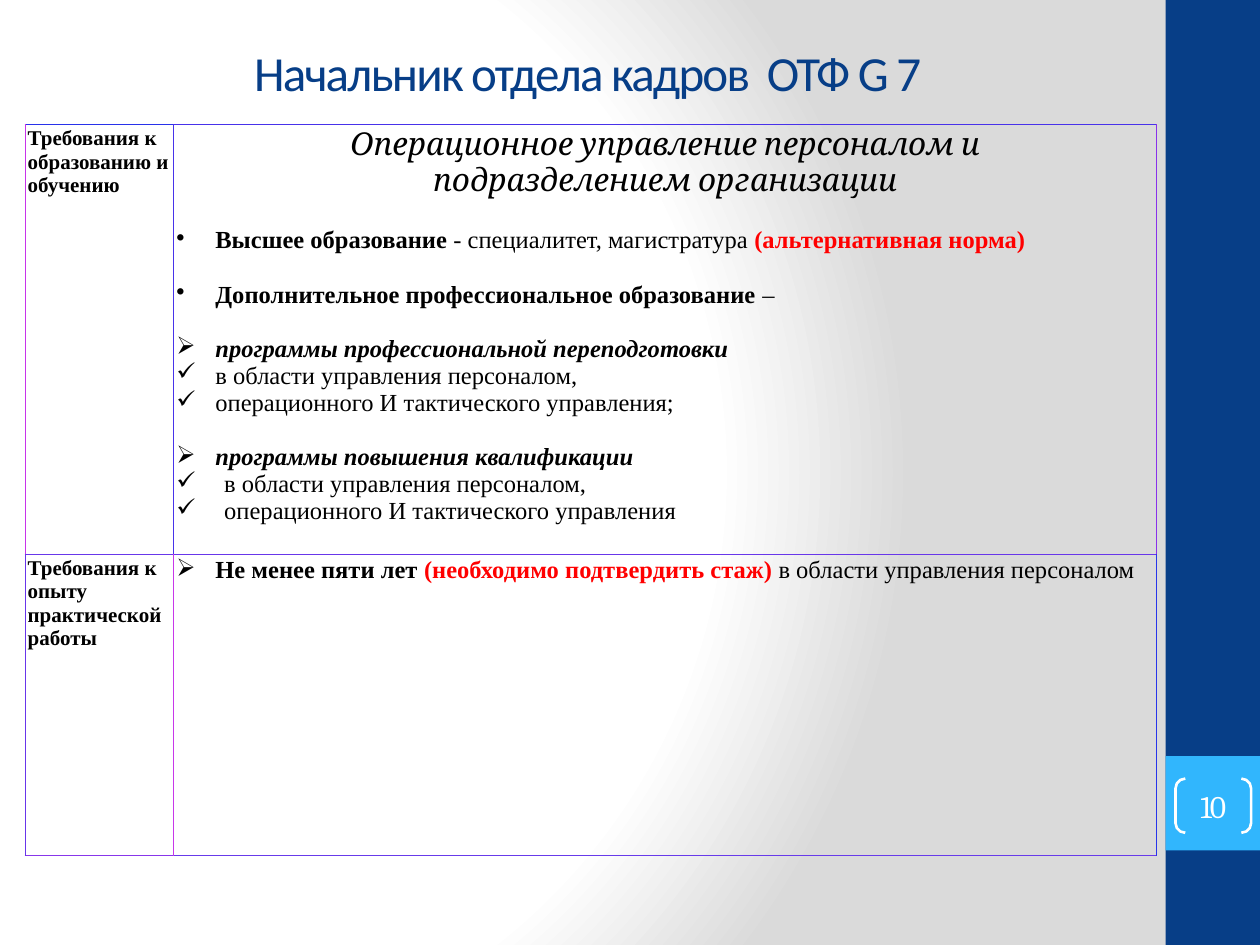
"""Build the slide with the requirements for a head of personnel."""
from lxml.etree import SubElement
from pptx import Presentation
from pptx.dml.color import RGBColor
from pptx.enum.shapes import MSO_SHAPE
from pptx.enum.text import MSO_ANCHOR, PP_ALIGN
from pptx.oxml import parse_xml
from pptx.oxml.ns import nsdecls, qn
from pptx.util import Inches, Pt

NAVY = RGBColor(0x07, 0x3E, 0x87)
SKY = RGBColor(0x31, 0xB6, 0xFD)
WHITE = RGBColor(0xFF, 0xFF, 0xFF)
BLACK = RGBColor(0x00, 0x00, 0x00)
RED = RGBColor(0xFF, 0x00, 0x00)

TITLE = "Начальник отдела кадров  ОТФ G 7"
PAGE_NUMBER = "10"
HEADING = ["Операционное управление персоналом и", "подразделением организации"]
ROW_LABELS = ["Требования к образованию и обучению", "Требования к опыту практической работы"]

GAP = 15.5
EDUCATION = [
    ("•", 0.31, GAP, [("Высшее образование ", "bold"), ("- специалитет, магистратура ", ""),
                      ("(альтернативная норма)", "bold red")]),
    ("•", 0.31, GAP, [("Дополнительное профессиональное образование ", "bold"), ("–", "")]),
    ("➢", 0.31, GAP, [("программы профессиональной переподготовки", "bold italic")]),
    ("✓", 0.31, 0, [("в области управления персоналом,", "")]),
    ("✓", 0.31, 0, [("операционного И тактического управления;", "")]),
    ("➢", 0.31, GAP, [("программы повышения квалификации", "bold italic")]),
    ("✓", 0.38, 0, [("в области управления персоналом,", "")]),
    ("✓", 0.38, 0, [("операционного И тактического управления", "")]),
]
EXPERIENCE = [
    ("➢", 0.31, 0, [("Не менее пяти лет ", "bold"), ("(необходимо подтвердить стаж) ", "bold red"),
                    ("в области управления персоналом", "")]),
]

COLUMN_WIDTHS = [1.18, 7.8]
ROW_HEIGHTS = [3.41, 2.39]
BORDER_SIDES = ["lnL", "lnR", "lnT", "lnB"]
BORDER_COLORS = [
    [("C833EA", "4833EA", "2831EA", "6837EA"), ("4833EA", "8831EA", "4831EA", "6836EA")],
    [("6835EA", "C837EA", "6837EA", "8836EA"), ("C837EA", "2835EA", "6836EA", "683AEA")],
]
GRADIENT_STOPS = [(0, "FFFFFF"), (75, "FFFFFF"), (100, "DADADA")]


def set_background(slide):
    stops = "".join(f'<a:gs pos="{position * 1000}"><a:srgbClr val="{color}"/></a:gs>'
                    for position, color in GRADIENT_STOPS)
    slide.element.cSld.insert(0, parse_xml(
        f'<p:bg {nsdecls("p", "a")}><p:bgPr><a:gradFill rotWithShape="1"><a:gsLst>{stops}</a:gsLst>'
        '<a:path path="circle"><a:fillToRect l="20000" t="50000" r="100000" b="50000"/></a:path>'
        '</a:gradFill><a:effectLst/></p:bgPr></p:bg>'))


def format_run(run, font_name, size, color=BLACK, bold=False, italic=False):
    font = run.font
    font.name, font.size, font.bold, font.italic = font_name, Pt(size), bold, italic
    font.color.rgb = color


def add_block(slide, top, height, color):
    shape = slide.shapes.add_shape(MSO_SHAPE.RECTANGLE, Inches(9.25), Inches(top), Inches(0.75), Inches(height))
    shape.shadow.inherit = False
    shape.fill.solid()
    shape.fill.fore_color.rgb = color
    shape.line.fill.background()


def write_centered(shape, text, font_name, size, color):
    frame = shape.text_frame
    frame.word_wrap = True
    frame.vertical_anchor = MSO_ANCHOR.MIDDLE
    frame.text = text
    paragraph = frame.paragraphs[0]
    paragraph.alignment = PP_ALIGN.CENTER
    run = paragraph.runs[0]
    format_run(run, font_name, size, color)
    run.font._element.set("spc", "-100")


def add_page_number(slide):
    shape = slide.shapes.add_shape(MSO_SHAPE.DOUBLE_BRACKET, Inches(9.33), Inches(6.18), Inches(0.6), Inches(0.43))
    shape.adjustments[0] = 0.18
    shape.shadow.inherit = False
    shape.fill.background()
    shape.line.color.rgb = WHITE
    shape.line.width = Pt(1.5)
    frame = shape.text_frame
    frame.margin_left = frame.margin_right = frame.margin_top = frame.margin_bottom = 0
    write_centered(shape, PAGE_NUMBER, "Cambria", 18, WHITE)


def format_cell(cell, colors):
    cell.margin_left = cell.margin_right = cell.margin_top = cell.margin_bottom = Inches(0.02)
    cell.fill.background()
    properties = cell._tc.get_or_add_tcPr()
    for index, (side, color) in enumerate(zip(BORDER_SIDES, colors)):
        properties.insert(index, parse_xml(
            f'<a:{side} {nsdecls("a")} w="9525"><a:solidFill><a:srgbClr val="{color}"/></a:solidFill></a:{side}>'))


def write_heading(frame):
    frame.text = "\n".join(HEADING)
    for paragraph in frame.paragraphs:
        paragraph.alignment = PP_ALIGN.CENTER
        format_run(paragraph.runs[0], "Cambria", 18, italic=True)


def write_items(frame, items):
    for bullet, indent, gap, runs in items:
        first = frame.paragraphs[0]
        paragraph = frame.add_paragraph() if first.runs else first
        paragraph.space_before = Pt(gap)
        properties = paragraph._p.get_or_add_pPr()
        properties.set("marL", str(Inches(indent)))
        properties.set("indent", str(-Inches(indent)))
        SubElement(properties, qn("a:buChar")).set("char", bullet)
        for text, style in runs:
            run = paragraph.add_run()
            run.text = text
            format_run(run, "Times New Roman", 14, RED if "red" in style else BLACK,
                       "bold" in style, "italic" in style)


def add_requirements(slide):
    table = slide.shapes.add_table(2, 2, Inches(0.2), Inches(0.99), Inches(sum(COLUMN_WIDTHS)),
                                   Inches(sum(ROW_HEIGHTS))).table
    table.first_row = table.horz_banding = False
    for column, width in zip(table.columns, COLUMN_WIDTHS):
        column.width = Inches(width)
    for index, (row, height) in enumerate(zip(table.rows, ROW_HEIGHTS)):
        row.height = Inches(height)
        for cell, colors in zip(row.cells, BORDER_COLORS[index]):
            format_cell(cell, colors)
        label = row.cells[0].text_frame
        label.text = ROW_LABELS[index]
        format_run(label.paragraphs[0].runs[0], "Times New Roman", 12, bold=True)
    education = table.cell(0, 1).text_frame
    write_heading(education)
    write_items(education, EDUCATION)
    write_items(table.cell(1, 1).text_frame, EXPERIENCE)


def main():
    presentation = Presentation()
    presentation.slide_width, presentation.slide_height = Inches(10), Inches(7.5)
    slide = presentation.slides.add_slide(presentation.slide_layouts[6])
    set_background(slide)
    add_block(slide, 0, 7.5, NAVY)
    add_block(slide, 6, 0.75, SKY)
    title = slide.shapes.add_textbox(Inches(0.5), Inches(0.3), Inches(8.33), Inches(0.54))
    write_centered(title, TITLE, "Calibri", 28, NAVY)
    add_requirements(slide)
    add_page_number(slide)
    presentation.save("out.pptx")


if __name__ == "__main__":
    main()
